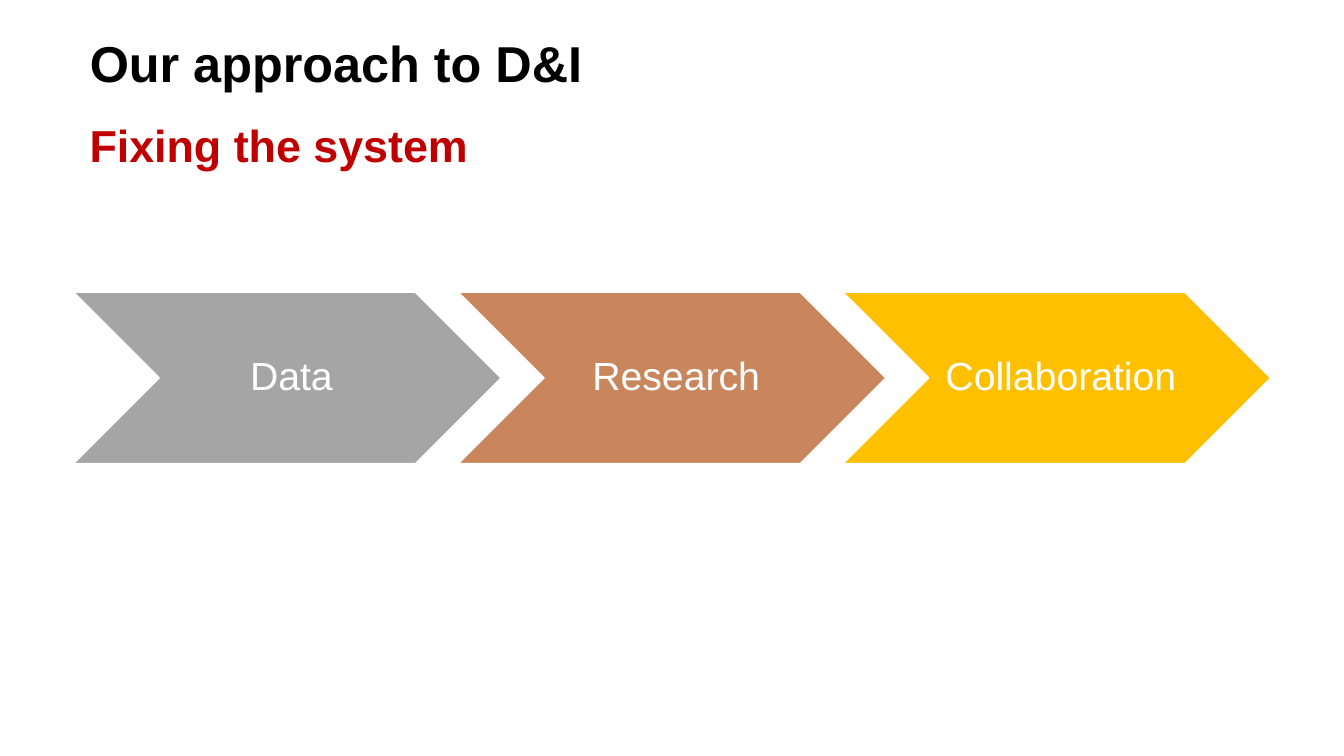
from dataclasses import dataclass

from pptx import Presentation
from pptx.dml.color import RGBColor
from pptx.enum.shapes import MSO_SHAPE
from pptx.enum.text import MSO_ANCHOR, MSO_AUTO_SIZE, PP_ALIGN
from pptx.slide import Slide
from pptx.text.text import TextFrame
from pptx.util import Inches, Pt

CHEVRON = MSO_SHAPE.CHEVRON
MIDDLE, TOP = MSO_ANCHOR.MIDDLE, MSO_ANCHOR.TOP
NO_AUTOFIT = MSO_AUTO_SIZE.NONE
CENTER, LEFT = PP_ALIGN.CENTER, PP_ALIGN.LEFT

WHITE = RGBColor(0xFF, 0xFF, 0xFF)
BLACK = RGBColor(0x00, 0x00, 0x00)
RED = RGBColor(0xC0, 0x00, 0x00)
GRAY = RGBColor(0xA5, 0xA5, 0xA5)
COPPER = RGBColor(0xC9, 0x86, 0x5C)
AMBER = RGBColor(0xFF, 0xC0, 0x00)

FONT = "Arial"
STEP_LEFT, STEP_TOP = 0.73, 2.9
STEP_WIDTH, STEP_HEIGHT = 4.24, 1.7
STEP_PITCH = 0.9 * STEP_WIDTH  # neighbours overlap by a tenth


@dataclass(frozen=True)
class Step:
    label: str
    color: RGBColor


STEPS = [
    Step("Data", GRAY),
    Step("Research", COPPER),
    Step("Collaboration", AMBER),
]


def write(frame: TextFrame, text: str, size: int, color: RGBColor,
          align: PP_ALIGN, anchor: MSO_ANCHOR, bold: bool = False) -> None:
    """Fill a frame with one formatted paragraph."""
    frame.word_wrap = True
    frame.auto_size = NO_AUTOFIT
    frame.vertical_anchor = anchor
    paragraph = frame.paragraphs[0]
    paragraph.text = text
    paragraph.alignment = align
    paragraph.line_spacing = 0.9
    paragraph.font.name = FONT
    paragraph.font.size = Pt(size)
    paragraph.font.bold = bold
    paragraph.font.color.rgb = color


def add_step(slide: Slide, index: int, step: Step) -> None:
    chevron = slide.shapes.add_shape(
        CHEVRON, Inches(STEP_LEFT + index * STEP_PITCH), Inches(STEP_TOP),
        Inches(STEP_WIDTH), Inches(STEP_HEIGHT))
    chevron.shadow.inherit = False
    chevron.fill.solid()
    chevron.fill.fore_color.rgb = step.color
    chevron.line.color.rgb = WHITE
    chevron.line.width = Pt(1)
    frame = chevron.text_frame
    frame.margin_left = Inches(0.12)
    frame.margin_top = frame.margin_right = frame.margin_bottom = Inches(0.04)
    write(frame, step.label, 28, WHITE, CENTER, MIDDLE)


def main() -> None:
    deck = Presentation()
    deck.slide_width, deck.slide_height = Inches(13.33), Inches(7.5)
    slide = deck.slides.add_slide(deck.slide_layouts[5])

    # Title
    title = slide.shapes.title
    title.left, title.top = Inches(0.79), Inches(0.3)
    title.width, title.height = Inches(9.25), Inches(0.71)
    write(title.text_frame, "Our approach to D&I", 36, BLACK, LEFT, MIDDLE, bold=True)

    # Subtitle
    subtitle = slide.shapes.add_textbox(
        Inches(0.79), Inches(1.18), Inches(9.34), Inches(0.52))
    write(subtitle.text_frame, "Fixing the system", 32, RED, LEFT, TOP, bold=True)
    subtitle.text_frame.paragraphs[0].space_before = Pt(10)

    # Process steps
    for index, step in enumerate(STEPS):
        add_step(slide, index, step)

    deck.save("out.pptx")


if __name__ == "__main__":
    main()
